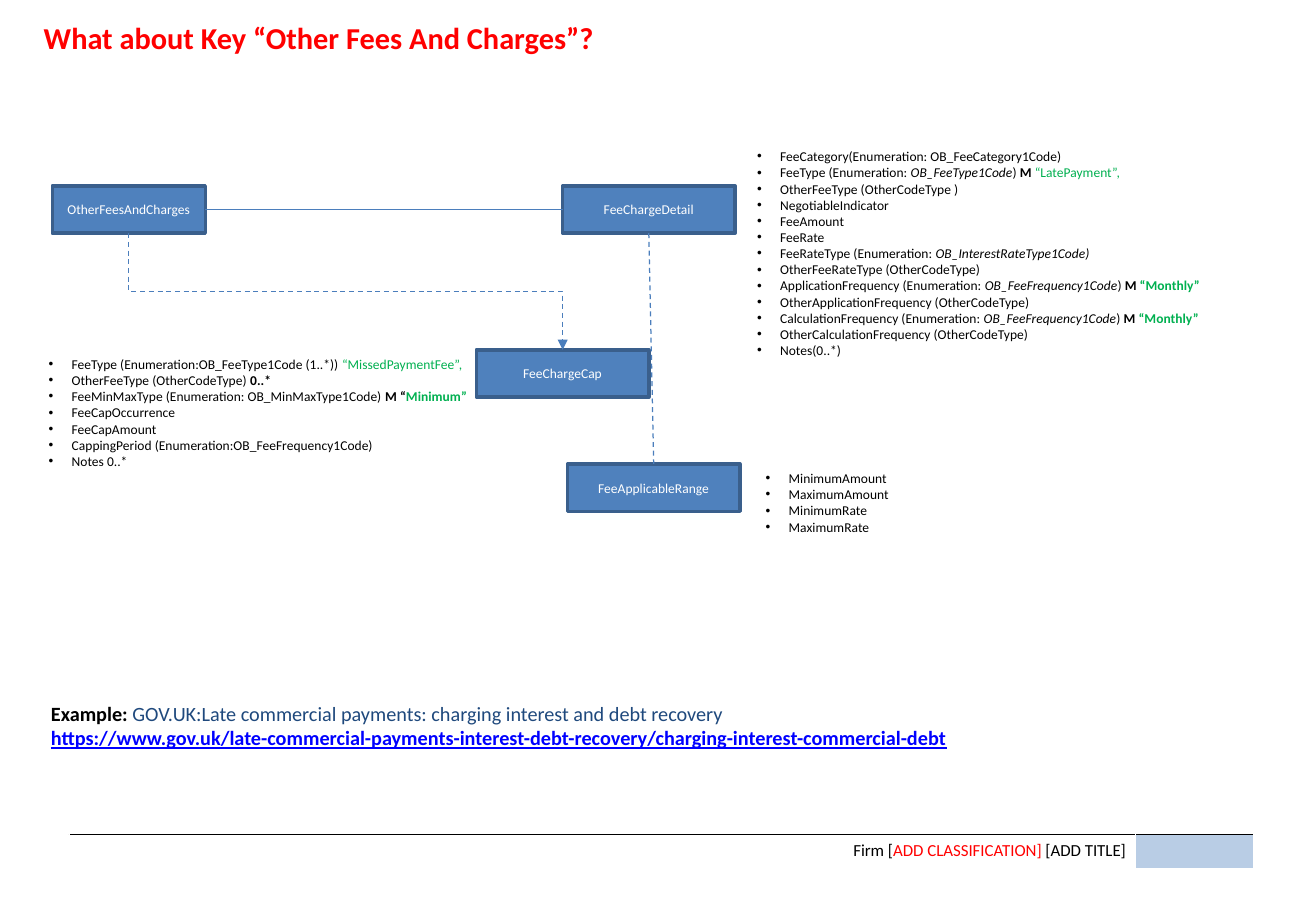
from lxml import etree
from pptx import Presentation
from pptx.dml.color import RGBColor
from pptx.enum.dml import MSO_LINE
from pptx.enum.shapes import MSO_CONNECTOR, MSO_SHAPE
from pptx.enum.text import MSO_ANCHOR, MSO_AUTO_SIZE, PP_ALIGN
from pptx.oxml.ns import qn
from pptx.util import Inches, Pt

RECT = MSO_SHAPE.RECTANGLE
STRAIGHT, ELBOW = MSO_CONNECTOR.STRAIGHT, MSO_CONNECTOR.ELBOW
DASH = MSO_LINE.DASH
TOP, MIDDLE = MSO_ANCHOR.TOP, MSO_ANCHOR.MIDDLE
LEFT, CENTER, RIGHT = PP_ALIGN.LEFT, PP_ALIGN.CENTER, PP_ALIGN.RIGHT
NO_FIT = MSO_AUTO_SIZE.NONE

BLACK = RGBColor(0x00, 0x00, 0x00)
WHITE = RGBColor(0xFF, 0xFF, 0xFF)
RED = RGBColor(0xFF, 0x00, 0x00)
GREEN = RGBColor(0x00, 0xB0, 0x50)
NAVY = RGBColor(0x1F, 0x49, 0x7D)
LINK = RGBColor(0x00, 0x00, 0xFF)
BLUE = RGBColor(0x4F, 0x81, 0xBD)
EDGE = RGBColor(0x3A, 0x5F, 0x8C)
WIRE = RGBColor(0x4B, 0x7E, 0xBC)
PALE = RGBColor(0xB9, 0xCD, 0xE5)

WIDE, HIGH = Inches(10.83), Inches(7.5)
INDENT = Inches(0.19)

PLAIN = {"bold": False, "italic": False, "underline": False, "name": "Calibri"}
STYLES = {
    "plain": (BLACK, {}),
    "bold": (BLACK, {"bold": True}),
    "italic": (BLACK, {"italic": True}),
    "green": (GREEN, {}),
    "strong": (GREEN, {"bold": True}),
    "white": (WHITE, {}),
    "red": (RED, {}),
    "head": (RED, {"bold": True}),
    "navy": (NAVY, {}),
    "link": (LINK, {"bold": True, "underline": True}),
}

DETAIL = [
    [("FeeCategory(Enumeration: OB_FeeCategory1Code)", "plain")],
    [("FeeType (Enumeration: ", "plain"), ("OB_FeeType1Code", "italic"),
     (") ", "plain"), ("M", "bold"), (" “LatePayment”,", "green")],
    [("OtherFeeType (OtherCodeType )", "plain")],
    [("NegotiableIndicator", "plain")],
    [("FeeAmount", "plain")],
    [("FeeRate", "plain")],
    [("FeeRateType (Enumeration: ", "plain"), ("OB_InterestRateType1Code)", "italic")],
    [("OtherFeeRateType (OtherCodeType)", "plain")],
    [("ApplicationFrequency (Enumeration: ", "plain"), ("OB_FeeFrequency1Code", "italic"),
     (") ", "plain"), ("M ", "bold"), ("“Monthly”", "strong")],
    [("OtherApplicationFrequency (OtherCodeType)", "plain")],
    [("CalculationFrequency (Enumeration: ", "plain"), ("OB_FeeFrequency1Code", "italic"),
     (") ", "plain"), ("M ", "bold"), ("“Monthly”", "strong")],
    [("OtherCalculationFrequency (OtherCodeType)", "plain")],
    [("Notes(0..*)", "plain")],
]
CAP = [
    [("FeeType (Enumeration:OB_FeeType1Code (1..*))", "plain"),
     (" “MissedPaymentFee”,", "green")],
    [("OtherFeeType (OtherCodeType) ", "plain"), ("0..*", "bold")],
    [("FeeMinMaxType (Enumeration: OB_MinMaxType1Code) ", "plain"),
     ("M “", "bold"), ("Minimum”", "strong")],
    [("FeeCapOccurrence", "plain")],
    [("FeeCapAmount", "plain")],
    [("CappingPeriod (Enumeration:OB_FeeFrequency1Code)", "plain")],
    [("Notes 0..*", "plain")],
]
RANGE = [[(name, "plain")] for name in
         ("MinimumAmount", "MaximumAmount", "MinimumRate", "MaximumRate")]
EXAMPLE = [
    [("Example: ", "bold"),
     ("GOV.UK:Late commercial payments: charging interest and debt recovery", "navy")],
    [("https://www.gov.uk/late-commercial-payments-interest-debt-recovery/"
      "charging-interest-commercial-debt", "link")],
]
TITLE = [[("What about Key “Other Fees And Charges”?", "head")]]
FOOTER = [[("Firm [", "plain"), ("ADD CLASSIFICATION] ", "red"), ("[ADD TITLE]", "plain")]]


def share(x, y, w, h):
    """Turn percentages of the slide into a box of lengths."""
    return [int(part * full / 100) for part, full in zip((x, y, w, h), (WIDE, HIGH) * 2)]


def assign(thing, values):
    """Set every attribute in the dict of values."""
    for key, value in values.items():
        setattr(thing, key, value)


def write(frame, rows, size, align=LEFT, bullet=False):
    """Fill a text frame with rows of styled runs."""
    for count, row in enumerate(rows):
        para = frame.add_paragraph() if count else frame.paragraphs[0]
        props = para._p.get_or_add_pPr()
        props.set("marL", str(INDENT if bullet else 0))
        props.set("indent", str(-INDENT if bullet else 0))
        if bullet:
            etree.SubElement(props, qn("a:buFont")).set("typeface", "Arial")
            etree.SubElement(props, qn("a:buChar")).set("char", "•")
        else:
            etree.SubElement(props, qn("a:buNone"))
        assign(para, {"alignment": align, "space_before": Pt(0), "line_spacing": 1.0})
        for text, style in row:
            run = para.add_run()
            run.text = text
            color, extra = STYLES[style]
            assign(run.font, {**PLAIN, **extra, "size": Pt(size)})
            run.font.color.rgb = color


def block(holder, box, rows, size, bullet=False):
    """Move a placeholder to its box and fill it."""
    assign(holder, dict(zip(("left", "top", "width", "height"), box)))
    assign(holder.text_frame, {"word_wrap": True, "auto_size": NO_FIT,
                               "vertical_anchor": TOP})
    write(holder.text_frame, rows, size, bullet=bullet)


def node(slide, box, name):
    """Draw one named entity."""
    shape = slide.shapes.add_shape(RECT, *box)
    shape.shadow.inherit = False
    shape.fill.solid()
    shape.fill.fore_color.rgb = BLUE
    shape.line.color.rgb = EDGE
    shape.line.width = Pt(2)
    assign(shape.text_frame, {"word_wrap": True, "vertical_anchor": MIDDLE})
    write(shape.text_frame, [[(name, "white")]], 8, CENTER)
    return shape


def link(slide, start, end, kind=STRAIGHT, dash=None):
    """Join the given sides of two entities."""
    line = slide.shapes.add_connector(kind, 0, 0, 0, 0)
    line.begin_connect(*start)
    line.end_connect(*end)
    line.line.color.rgb = WIRE
    assign(line.line, {"width": Pt(0.75), "dash_style": dash})
    etree.SubElement(line._element.spPr, qn("a:effectLst"))
    return line


def bend(line):
    """Turn an elbow to leave downwards and end in an arrow."""
    across, down = line.width, line.height
    mid, half = line.left + across // 2, line.top + down // 2
    assign(line, {"left": mid - down // 2, "top": half - across // 2,
                  "width": down, "height": across})
    frame = line._element.spPr.find(qn("a:xfrm"))
    frame.set("rot", "16200000")
    frame.set("flipH", "1")
    etree.SubElement(line.line._get_or_add_ln(), qn("a:tailEnd")).set("type", "triangle")


def chart(slide):
    """Draw the four entities and their links."""
    fees = node(slide, share(3.97, 20.4, 11.63, 5.2), "OtherFeesAndCharges")
    detail = node(slide, share(42.75, 20.4, 13.11, 5.2), "FeeChargeDetail")
    span = node(slide, share(43.12, 50.93, 13.11, 5.2), "FeeApplicableRange")
    cap = node(slide, share(36.2, 38.4, 13.11, 5.2), "FeeChargeCap")
    link(slide, (fees, 3), (detail, 1))
    link(slide, (detail, 2), (span, 0), dash=DASH)
    bend(link(slide, (fees, 2), (cap, 0), ELBOW, DASH))


def footer(slide, box):
    """Build the ruled footer table with its shaded end cell."""
    table = slide.shapes.add_table(1, 2, *box).table
    assign(table, {"first_row": False, "horz_banding": False})
    for col, part in zip(table.columns, (0.9, 0.1)):
        col.width = int(box[2] * part)
    for cell, rows in zip(table.rows[0].cells, (FOOTER, [[]])):
        assign(cell, {"margin_left": Inches(0.08), "margin_right": Inches(0.08)})
        write(cell.text_frame, rows, 10, RIGHT)
        cell.fill.background()
        edge = etree.Element(qn("a:lnT"), w=str(Pt(1)))
        fill = etree.SubElement(edge, qn("a:solidFill"))
        etree.SubElement(fill, qn("a:srgbClr")).set("val", str(BLACK))
        cell._tc.get_or_add_tcPr().insert(0, edge)
    cell.fill.solid()
    cell.fill.fore_color.rgb = PALE
    cell.text_frame.paragraphs[0].font.size = Pt(10)


def main():
    """Build the slide and save it."""
    deck = Presentation()
    assign(deck, {"slide_width": WIDE, "slide_height": HIGH})
    slide = deck.slides.add_slide(deck.slide_layouts[4])
    title, example, detail, cap, span = slide.placeholders
    block(title, share(2.4, 1.47, 45, 5.33), TITLE, 18)
    block(example, share(2.95, 76.27, 71.19, 9.47), EXAMPLE, 12)
    block(detail, share(56.6, 15.6, 40.72, 24.67), DETAIL, 8, True)
    block(cap, share(2.77, 38.4, 34.3, 13.87), CAP, 8, True)
    block(span, share(57.25, 50.93, 12, 8.53), RANGE, 8, True)
    chart(slide)
    footer(slide, share(5.26, 91.6, 90.03, 3.73))
    deck.save("out.pptx")


if __name__ == "__main__":
    main()
